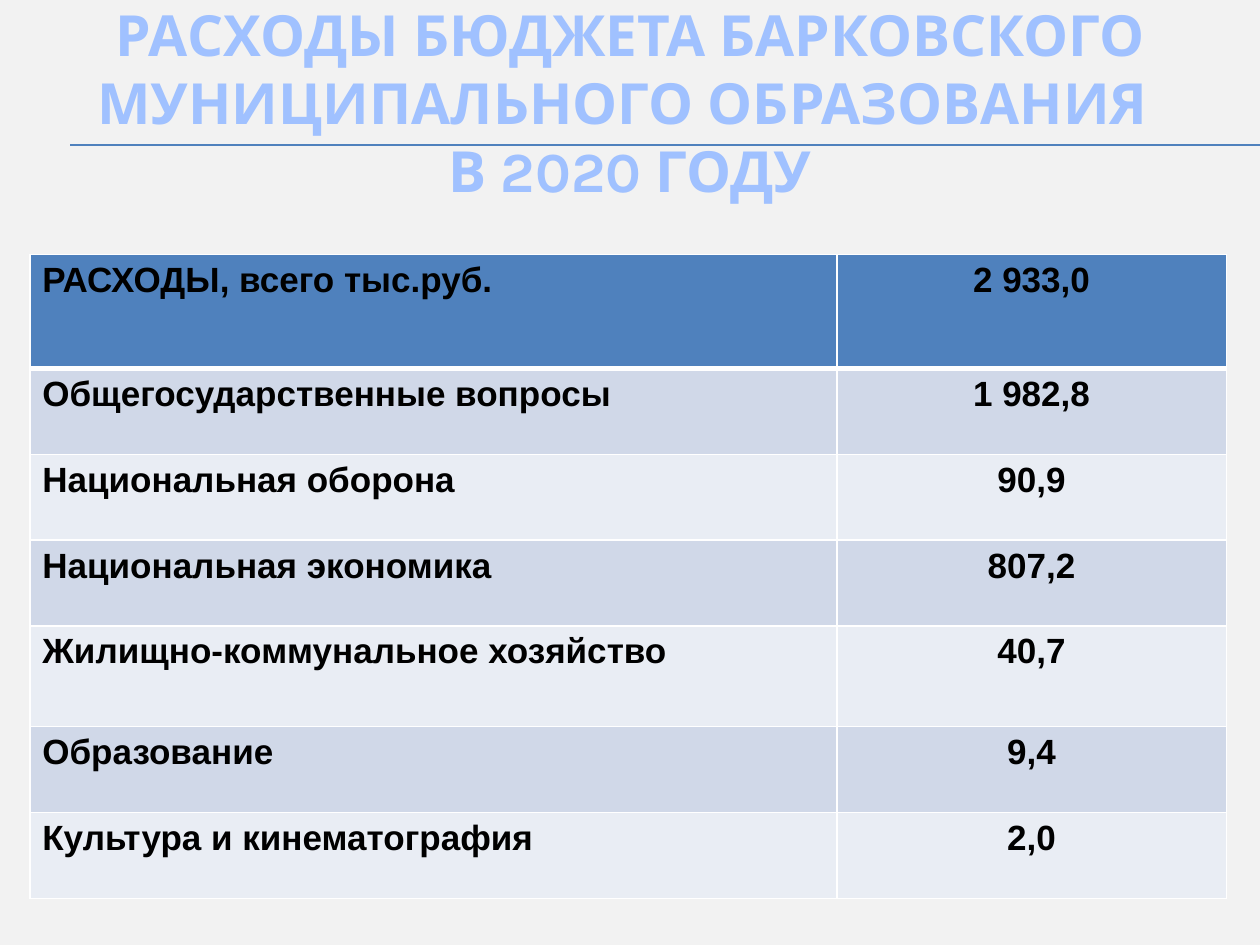
import pptx
import pptx.util
import pptx.dml.color
import pptx.enum.shapes
import pptx.enum.text
import pptx.oxml
import pptx.oxml.ns
from pptx.util import Cm, Pt

TITLE = "РАСХОДЫ БЮДЖЕТА БАРКОВСКОГО МУНИЦИПАЛЬНОГО ОБРАЗОВАНИЯ \vВ 2020 ГОДУ"
# expense item, amount in thousand roubles, row height in cm
EXPENSES = [
    ("РАСХОДЫ, всего тыс.руб.", "2 933,0", 2.3),
    ("Общегосударственные вопросы", "1 982,8", 1.73),
    ("Национальная оборона", "90,9", 1.73),
    ("Национальная экономика", "807,2", 1.73),
    ("Жилищно-коммунальное хозяйство", "40,7", 2.03),
    ("Образование", "9,4", 1.73),
    ("Культура и кинематография", "2,0", 1.73),
]
COLUMN_WIDTHS = [16.27, 7.85]
COLORS = {
    "background": "F2F2F2", "title": "A0C1FF", "accent": "4F81BD",
    "odd": "D0D8E8", "even": "E9EDF4", "text": "000000", "border": "FFFFFF",
}
TITLE_FONT = {"name": "Karla", "size": Pt(32.4), "bold": True}
CELL_FONT = {"name": "Arial", "size": Pt(20), "bold": True}
CENTER = pptx.enum.text.PP_ALIGN.CENTER


def color(key):
    return pptx.dml.color.RGBColor.from_string(COLORS[key])


def format_font(font, values, color_key):
    for attribute, value in values.items():
        setattr(font, attribute, value)
    font.color.rgb = color(color_key)


def set_borders(cell, bottom_width, top_width):
    widths = {"lnL": 1, "lnR": 1, "lnT": top_width, "lnB": bottom_width}
    properties = cell._tc.get_or_add_tcPr()
    for position, (tag, width) in enumerate(widths.items()):
        border = pptx.oxml.parse_xml(
            f'<a:{tag} {pptx.oxml.ns.nsdecls("a")} w="{Pt(width)}"><a:solidFill>'
            f'<a:srgbClr val="{COLORS["border"]}"/></a:solidFill></a:{tag}>')
        properties.insert(position, border)


def add_rule(slide):
    rule = slide.shapes.add_connector(
        pptx.enum.shapes.MSO_CONNECTOR.STRAIGHT,
        Cm(1.42), Cm(2.93), Cm(25.4), Cm(2.93))
    rule.line.color.rgb = color("accent")
    rule.line.width = Pt(1.25)
    rule._element.spPr.append(pptx.oxml.parse_xml(
        f'<a:effectLst {pptx.oxml.ns.nsdecls("a")}/>'))


def add_title(slide):
    frame = slide.shapes.add_textbox(0, 0, Cm(25.4), Cm(4.11)).text_frame
    frame.word_wrap = True
    frame.vertical_anchor = pptx.enum.text.MSO_ANCHOR.MIDDLE
    frame.margin_top = frame.margin_bottom = 0
    paragraph = frame.paragraphs[0]
    paragraph.text = TITLE
    paragraph.alignment = CENTER
    paragraph.line_spacing = 1.0
    for run in paragraph.runs:
        format_font(run.font, TITLE_FONT, "title")


def add_expenses(slide):
    table = slide.shapes.add_table(
        len(EXPENSES), len(COLUMN_WIDTHS), Cm(0.6), Cm(5.13),
        Cm(sum(COLUMN_WIDTHS)), Cm(sum(row[2] for row in EXPENSES))).table
    for column, width in zip(table.columns, COLUMN_WIDTHS):
        column.width = Cm(width)
    for index, (item, amount, height) in enumerate(EXPENSES):
        table.rows[index].height = Cm(height)
        band = "accent" if index == 0 else "odd" if index % 2 else "even"
        for cell, content in zip(table.rows[index].cells, (item, amount)):
            cell.fill.solid()
            cell.fill.fore_color.rgb = color(band)
            set_borders(cell, bottom_width=3 if index == 0 else 1,
                        top_width=3 if index == 1 else 1)
            paragraph = cell.text_frame.paragraphs[0]
            paragraph.text = content
            format_font(paragraph.runs[0].font, CELL_FONT, "text")
            if content == amount:
                paragraph.alignment = CENTER


def main():
    presentation = pptx.Presentation()
    presentation.slide_width, presentation.slide_height = Cm(25.4), Cm(19.05)
    slide = presentation.slides.add_slide(presentation.slide_layouts[6])
    slide.background.fill.solid()
    slide.background.fill.fore_color.rgb = color("background")
    add_rule(slide)
    add_title(slide)
    add_expenses(slide)
    presentation.save("out.pptx")


if __name__ == "__main__":
    main()
